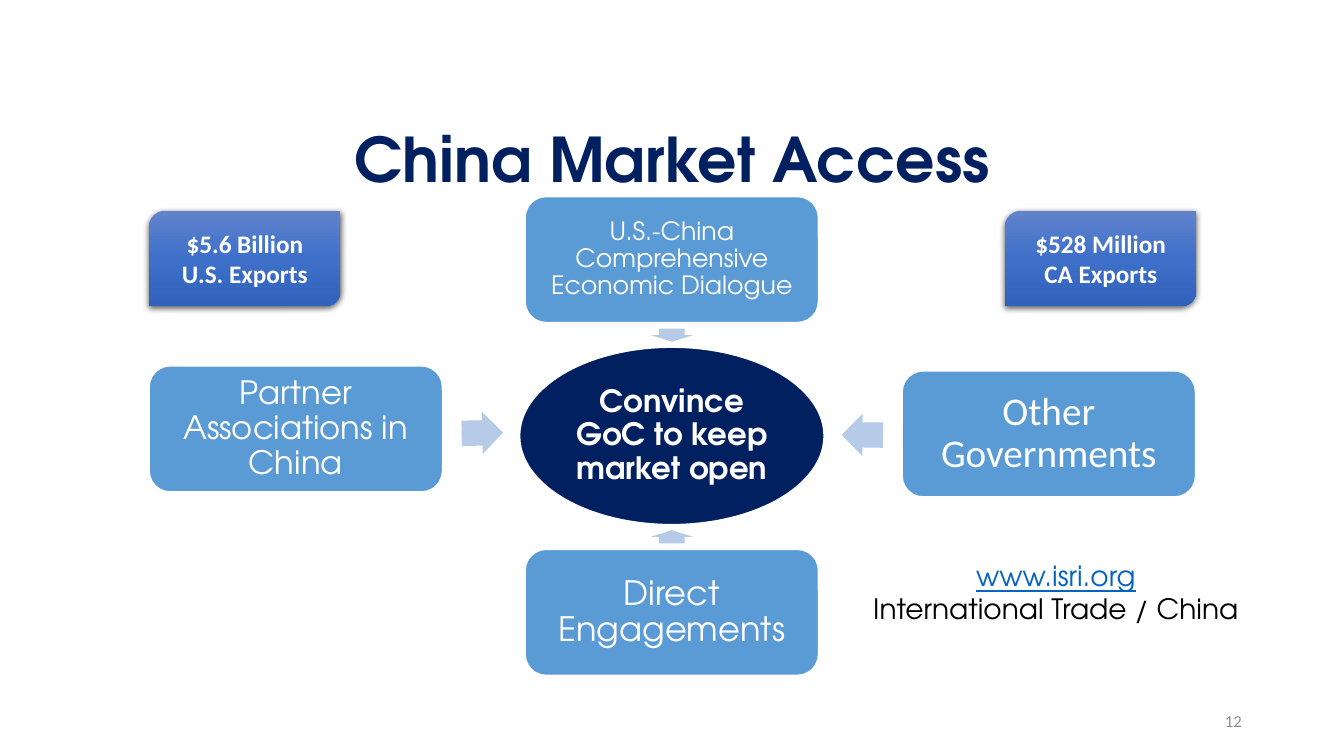
from pptx import Presentation
from pptx.dml.color import RGBColor as RGB
from pptx.enum.shapes import MSO_SHAPE as SHAPE
from pptx.enum.text import MSO_ANCHOR as ANCHOR, MSO_AUTO_SIZE as AUTO, PP_ALIGN as ALIGN
from pptx.oxml import parse_xml
from pptx.oxml.ns import nsdecls
from pptx.util import Inches, Pt

COLS, ROWS = 133.33, 75
WIDTH, HEIGHT = Inches(13.33), Inches(7.5)
HEAD, BODY = "TeX Gyre Adventor", "Calibri"
C = {"navy": "002060", "blue": "5B9BD5", "arrow": "B5CBE7", "white": "FFFFFF",
     "black": "000000", "link": "0563C1", "grey": "8C8C8C",
     "top": "6183CB", "middle": "3E70CA", "bottom": "3062BB"}


def place(box):
    """Turn a grid box (left, top, columns, rows) into slide lengths."""
    x, y, w, h = box
    return [int(v) for v in (x * WIDTH / COLS, y * HEIGHT / ROWS,
                             w * WIDTH / COLS, h * HEIGHT / ROWS)]


def centred(cx, cy, w, h):
    """Return the grid box of a given size around a centre."""
    return cx - w / 2, cy - h / 2, w, h


def write(sp, text, size, font, colour, bold=None, align=ALIGN.CENTER, spacing=None):
    """Fill a shape with text in one style."""
    tf = sp.text_frame
    tf.text = text
    tf.word_wrap = True
    tf.vertical_anchor = ANCHOR.MIDDLE
    for p in tf.paragraphs:
        p.alignment = align
        p.line_spacing = spacing
        for r in p.runs:
            r.font.size, r.font.name, r.font.bold = Pt(size), font, bold
            r.font.color.rgb = RGB.from_string(C[colour])
    return tf


def add_shape(s, kind, box, fill=None, outlined=False):
    """Add a shadowless shape with an optional solid fill and white outline."""
    sp = s.shapes.add_shape(kind, *place(box))
    sp.shadow.inherit = False
    if fill:
        sp.fill.solid()
        sp.fill.fore_color.rgb = RGB.from_string(C[fill])
    if outlined:
        sp.line.color.rgb = RGB.from_string(C["white"])
        sp.line.width = Pt(1)
    else:
        sp.line.fill.background()
    return sp


def add_title(s, box):
    """Place and format the title."""
    title = s.shapes.title
    title.left, title.top, title.width, title.height = place(box)
    tf = write(title, "China Market Access", 44, HEAD, "navy", True, spacing=0.9)
    tf.auto_size = AUTO.NONE


def add_node(s, kind, box, fill, text, size, font=HEAD, bold=None):
    """Add one labelled node of the diagram."""
    sp = add_shape(s, kind, box, fill, True)
    tf = write(sp, text, size, font, "white", bold, spacing=0.9)
    tf.margin_left = tf.margin_right = tf.margin_top = tf.margin_bottom = Inches(0.03)


def add_diagram(s, box):
    """Draw the central goal with four nodes pointing at it."""
    x, y, w, h = box
    cx, cy = x + w / 2, y + h / 2
    add_node(s, SHAPE.OVAL, centred(cx, cy, 30.2, 17.6), "navy",
             "Convince GoC to keep market open", 22, bold=True)
    nodes = [
        ("U.S.-China Comprehensive Economic Dialogue", 18, HEAD, (0, -17.5), (0, -10), 1.3, 90),
        ("Other Governments", 28, BODY, (37.4, -0.2), (18.9, -0.1), 4.1, 180.3),
        ("Direct Engagements", 24, HEAD, (0, 17.5), (0, 10), 1.3, 270),
        ("Partner Associations in China", 23, HEAD, (-37.3, -0.7), (-18.8, -0.3), 4.1, 358.9),
    ]
    for text, size, font, (nx, ny), (ax, ay), length, angle in nodes:
        arrow = add_shape(s, SHAPE.RIGHT_ARROW, centred(cx + ax, cy + ay, length, 4.2), "arrow")
        arrow.adjustments[0], arrow.adjustments[1] = 0.6, 0.5
        arrow.rotation = angle
        add_node(s, SHAPE.ROUNDED_RECTANGLE, centred(cx + nx, cy + ny, 29.1, 12.5),
                 "blue", text, size, font)


def add_badge(s, box, text):
    """Add an export figure on a shaded badge with a soft shadow."""
    sp = add_shape(s, SHAPE.ROUND_2_DIAG_RECTANGLE, box)
    stops = "".join(f'<a:gs pos="{pos}"><a:srgbClr val="{C[name]}"/></a:gs>' for pos, name in
                    ((0, "top"), (50000, "middle"), (100000, "bottom")))
    spPr = sp.fill._xPr
    spPr.insert(2, parse_xml(f'<a:gradFill {nsdecls("a")} rotWithShape="1"><a:gsLst>{stops}'
                             '</a:gsLst><a:lin ang="5400000" scaled="0"/></a:gradFill>'))
    spPr.find(".//{*}effectLst").append(parse_xml(
        f'<a:outerShdw {nsdecls("a")} blurRad="{Pt(4.5)}" dist="{Pt(1.5)}" dir="5400000" '
        f'algn="ctr" rotWithShape="0"><a:srgbClr val="{C["black"]}"><a:alpha val="63000"/>'
        '</a:srgbClr></a:outerShdw>'))
    write(sp, text, 18, BODY, "white", True)


def add_source(s, box):
    """Add the web address and where to look on the site."""
    tf = write(s.shapes.add_textbox(*place(box)),
               "www.isri.org\nInternational Trade / China", 20, HEAD, "black")
    tf.vertical_anchor = ANCHOR.TOP
    font = tf.paragraphs[0].runs[0].font
    font.color.rgb = RGB.from_string(C["link"])
    font.underline = True


def add_number(s, box):
    """Add the slide number."""
    write(s.shapes.add_textbox(*place(box)), "12", 12, BODY, "grey", align=ALIGN.RIGHT)


def main():
    """Build and save the slide."""
    prs = Presentation()
    prs.slide_width, prs.slide_height = WIDTH, HEIGHT
    s = prs.slides.add_slide(prs.slide_layouts[5])
    add_title(s, (9.2, 8.9, 115, 14.5))
    add_diagram(s, (14.8, 19.5, 103.7, 47.5))
    add_number(s, (94.2, 69.5, 30, 4))
    add_source(s, (78.9, 54.9, 51.7, 7.7))
    for left, text in ((14.8, "$5.6 Billion\nU.S. Exports"), (99.7, "$528 Million\nCA Exports")):
        add_badge(s, (left, 20.9, 19, 9.5), text)
    prs.save("out.pptx")


if __name__ == "__main__":
    main()
